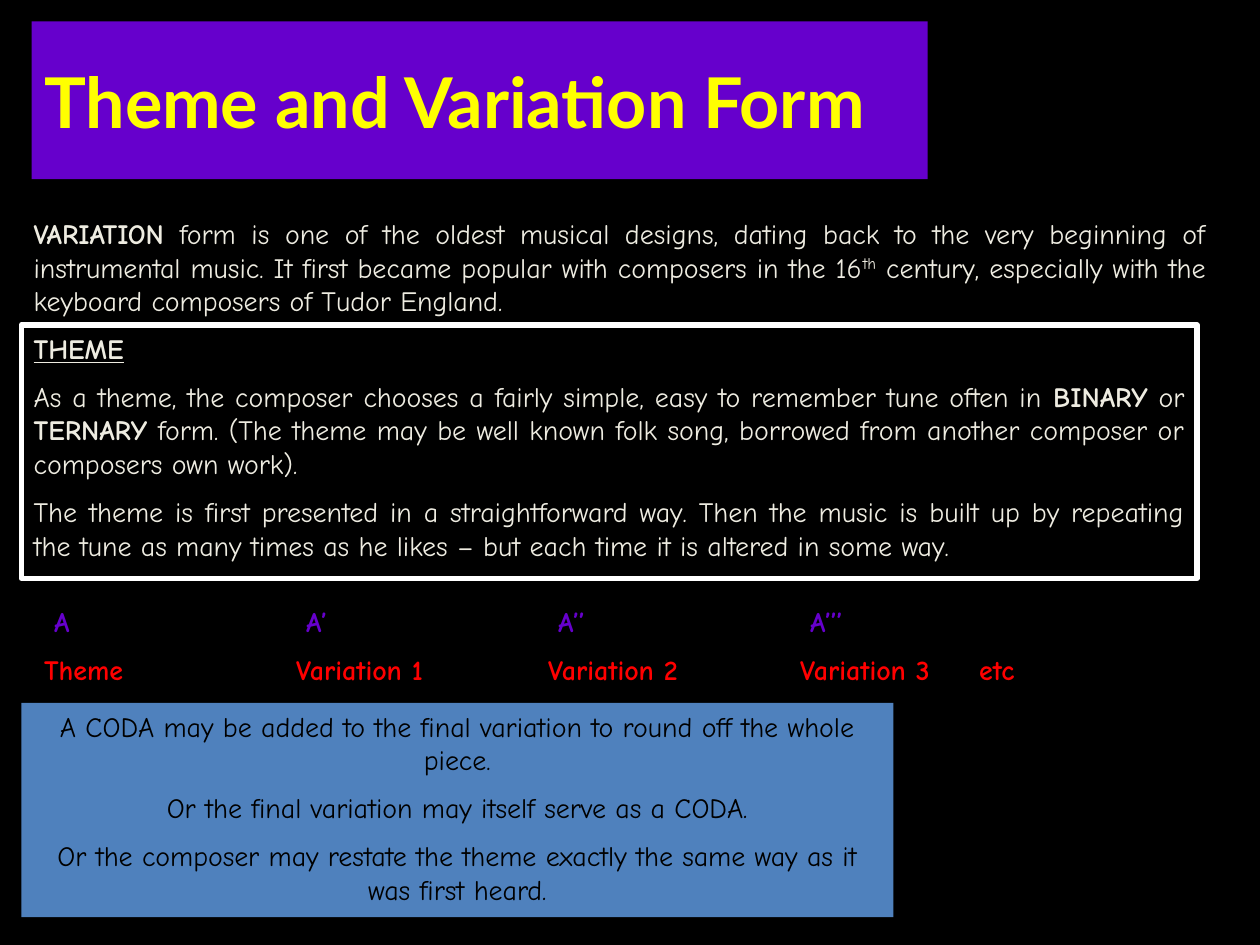
from lxml import etree
from pptx import Presentation
from pptx.dml.color import RGBColor
from pptx.enum.text import MSO_ANCHOR, MSO_AUTO_SIZE, PP_ALIGN
from pptx.oxml.ns import qn
from pptx.util import Cm, Pt

LEFT, CENTER, JUSTIFY = PP_ALIGN.LEFT, PP_ALIGN.CENTER, PP_ALIGN.JUSTIFY
MIDDLE = MSO_ANCHOR.MIDDLE
NO_AUTOFIT = MSO_AUTO_SIZE.NONE

BLACK, WHITE, CREAM = "000000", "FFFFFF", "EEECE1"
PURPLE, YELLOW, RED, BLUE = "6600CC", "FFFF00", "FF0000", "4F81BD"
BODY_FONT, TITLE_FONT = "Comic Neue", "Lato"
VARIATION_STOPS = [Cm(5.08 * step) for step in (1, 2, 3)]
ETC_STOP = Cm(18.85)

INTRODUCTION = [[
    ("VARIATION", "bold"),
    (" form is one of the oldest musical designs, dating back to the very "
     "beginning of instrumental music. It first became popular with composers "
     "in the 16", ""),
    ("th", "superscript"),
    (" century, especially with the keyboard composers of Tudor England.", ""),
]]
THEME = [
    [("THEME", "heading")],
    [("As a theme, the composer chooses a fairly simple, easy to remember tune "
      "often in ", ""),
     ("BINARY", "bold"),
     (" or ", ""),
     ("TERNARY", "bold"),
     (" form. (The theme may be well known folk song, borrowed from another "
      "composer or composers own work).", "")],
    [("The theme is first presented in a straightforward way. Then the music is "
      "built up by repeating the tune as many times as he likes – but each time "
      "it is altered in some way.", "")],
]
LETTERS = [" A", " A’", " A’’", " A’’’"]
SECTIONS = ["Theme", "Variation 1", "Variation 2", "Variation 3", "etc"]
CODA = [
    [("A CODA may be added to the final variation to round off the whole piece.", "")],
    [("Or the final variation may itself serve as a CODA.", "")],
    [("Or the composer may restate the theme exactly the same way as it was first "
      "heard.", "")],
]


def color(value):
    return RGBColor.from_string(value)


def paint(area, value):
    area.fill.solid()
    area.fill.fore_color.rgb = color(value)


def set_font(font, name, size, value, bold=False):
    font.name = name
    font.size = Pt(size)
    font.bold = bold
    font.color.rgb = color(value)


def add_tab_stops(paragraph, stops):
    properties = paragraph._p.get_or_add_pPr()
    tab_list = etree.SubElement(properties, qn("a:tabLst"))
    for stop in stops:
        etree.SubElement(tab_list, qn("a:tab"), pos=str(stop), algn="l")


def add_run(paragraph, text, style):
    run = paragraph.add_run()
    run.text = text
    if style in ("bold", "heading"):
        run.font.bold = True
    if style == "heading":
        run.font.underline = True
    if style == "superscript":
        run._r.get_or_add_rPr().set("baseline", "30000")


def add_panel(slide, left, top, width, height):
    panel = slide.shapes.add_textbox(Cm(left), Cm(top), Cm(width), Cm(height))
    panel.text_frame.word_wrap = True
    return panel


def next_paragraph(frame):
    if not frame.text:
        return frame.paragraphs[0]
    paragraph = frame.add_paragraph()
    paragraph.space_before = Pt(8.3)
    return paragraph


def write_prose(panel, passages, alignment, value):
    for passage in passages:
        paragraph = next_paragraph(panel.text_frame)
        paragraph.alignment = alignment
        set_font(paragraph.font, BODY_FONT, 16, value)
        for text, style in passage:
            add_run(paragraph, text, style)


def write_tabbed_row(panel, entries, value):
    paragraph = next_paragraph(panel.text_frame)
    add_tab_stops(paragraph, VARIATION_STOPS + [ETC_STOP])
    set_font(paragraph.font, BODY_FONT, 16, value, bold=True)
    add_run(paragraph, "\t".join(entries), "")


def add_title(slide, text):
    title = slide.shapes.title
    title.left, title.top = Cm(0.64), Cm(0.43)
    title.width, title.height = Cm(18.06), Cm(3.18)
    paint(title, PURPLE)
    frame = title.text_frame
    frame.text = text
    frame.auto_size = NO_AUTOFIT
    frame.vertical_anchor = MIDDLE
    paragraph = frame.paragraphs[0]
    paragraph.alignment = LEFT
    set_font(paragraph.font, TITLE_FONT, 40, YELLOW, bold=True)


def main():
    presentation = Presentation()
    presentation.slide_width, presentation.slide_height = Cm(25.4), Cm(19.05)
    slide = presentation.slides.add_slide(presentation.slide_layouts[5])
    paint(slide.background, BLACK)

    add_title(slide, "Theme and Variation Form")

    introduction = add_panel(slide, 0.43, 4.24, 24.13, 2.29)
    write_prose(introduction, INTRODUCTION, JUSTIFY, CREAM)

    theme = add_panel(slide, 0.43, 6.55, 23.7, 5.11)
    theme.line.color.rgb = color(WHITE)
    theme.line.width = Pt(3)
    write_prose(theme, THEME, JUSTIFY, CREAM)

    structure = add_panel(slide, 0.64, 12.07, 21.59, 2.1)
    write_tabbed_row(structure, LETTERS, PURPLE)
    write_tabbed_row(structure, SECTIONS, RED)

    coda = add_panel(slide, 0.43, 14.17, 17.58, 4.32)
    paint(coda, BLUE)
    write_prose(coda, CODA, CENTER, BLACK)

    presentation.save("out.pptx")


if __name__ == "__main__":
    main()
